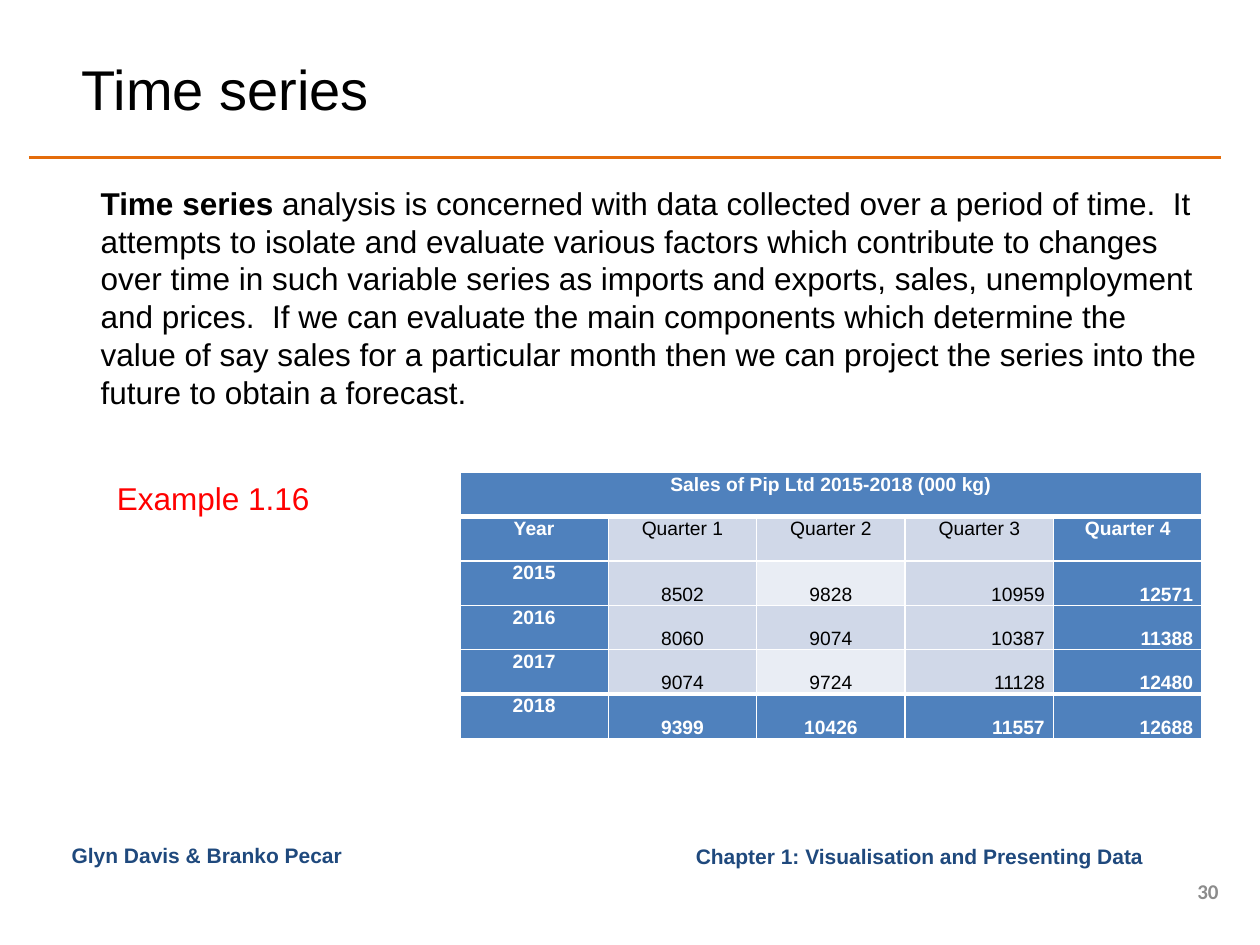
from pptx import Presentation
from pptx.dml.color import RGBColor
from pptx.enum.shapes import MSO_CONNECTOR
from pptx.enum.text import MSO_ANCHOR, PP_ALIGN
from pptx.oxml.ns import qn
from pptx.util import Inches, Pt
from lxml.etree import SubElement, Element

COLORS = {
    "text": "000000", "rule": "E46C0A", "footer": "1F497D", "number": "8C8C8C",
    "example": "FF0000", "white": "FFFFFF", "header": "4F81BD",
    "band": "D0D8E8", "light": "E9EDF4",
}
BODY = (
    " analysis is concerned with data collected over a period of time.  It attempts "
    "to isolate and evaluate various factors which contribute to changes over time in "
    "such variable series as imports and exports, sales, unemployment and prices.  If "
    "we can evaluate the main components which determine the value of say sales for a "
    "particular month then we can project the series into the future to obtain a forecast."
)
SALES_TITLE = "Sales of Pip Ltd 2015-2018 (000 kg)"
SALES = [
    ["Year", "Quarter 1", "Quarter 2", "Quarter 3", "Quarter 4"],
    [2015, 8502, 9828, 10959, 12571],
    [2016, 8060, 9074, 10387, 11388],
    [2017, 9074, 9724, 11128, 12480],
    [2018, 9399, 10426, 11557, 12688],
]


def rgb(name):
    return RGBColor.from_string(COLORS[name])


def add_run(p, text, color, size, bold=False, name="Arial"):
    r = p.add_run()
    r.text = text
    for key, value in {"name": name, "size": Pt(size), "bold": bold}.items():
        setattr(r.font, key, value)
    r.font.color.rgb = rgb(color)


def add_text(s, box, runs, align=PP_ALIGN.LEFT, anchor=MSO_ANCHOR.TOP):
    tf = s.shapes.add_textbox(*map(Inches, box)).text_frame
    tf.word_wrap = True
    tf.vertical_anchor = anchor
    p = tf.paragraphs[0]
    p.alignment = align
    for run in runs:
        add_run(p, **run)


def add_header(s, box):
    """Title with an orange rule along the bottom of the box."""
    left, top, width, height = box
    add_text(s, (left + 0.32, top, 7.58, 0.78),
             [{"text": "Time series", "color": "text", "size": 32}],
             anchor=MSO_ANCHOR.MIDDLE)
    y = Inches(top + height)
    rule = s.shapes.add_connector(MSO_CONNECTOR.STRAIGHT, Inches(left), y,
                                  Inches(left + width), y)
    rule.line.color.rgb = rgb("rule")
    rule.line.width = Pt(2)
    SubElement(rule._element.spPr, qn("a:effectLst"))


def add_body(s, box):
    """Definition paragraph and the example label below it."""
    left, top, width, height = box
    add_text(s, box, [
        {"text": "Time series", "color": "text", "size": 18, "bold": True},
        {"text": BODY, "color": "text", "size": 18},
    ])
    add_text(s, (left + 0.13, top + 2.34, 2.02, 0.4),
             [{"text": "Example 1.16", "color": "example", "size": 18}])


def set_borders(cell, widths):
    tcPr = cell._tc.get_or_add_tcPr()
    for i, (side, width) in enumerate(widths.items()):
        ln = Element(qn(f"a:ln{side}"), w=str(Pt(width)))
        fill = SubElement(ln, qn("a:solidFill"))
        SubElement(fill, qn("a:srgbClr"), val=COLORS["white"])
        tcPr.insert(i, ln)


def cell_fill(row, col, last_row, last_col):
    if row in (0, last_row) or col in (0, last_col):
        return "header"
    return "light" if col == 2 and row % 2 == 0 else "band"


def add_sales_table(s, box):
    """Quarterly sales: title row, column heads, then one row a year."""
    rows = [[SALES_TITLE, "", "", "", ""]] + SALES
    last_row, last_col = len(rows) - 1, len(rows[0]) - 1
    tbl = s.shapes.add_table(len(rows), len(rows[0]), *map(Inches, box)).table
    for i, row in enumerate(rows):
        for j, value in enumerate(row):
            cell = tbl.cell(i, j)
            fill = cell_fill(i, j, last_row, last_col)
            is_number = i > 1 and j > 0
            settings = {
                "margin_left": Inches(0.07), "margin_right": Inches(0.07),
                "margin_top": 0, "margin_bottom": 0,
                "vertical_anchor": MSO_ANCHOR.BOTTOM if is_number else MSO_ANCHOR.TOP,
            }
            for key, setting in settings.items():
                setattr(cell, key, setting)
            cell.fill.solid()
            cell.fill.fore_color.rgb = rgb(fill)
            # Thick lines close the title row and open the last year
            set_borders(cell, {"L": 1, "R": 1,
                               "T": 3 if i in (1, last_row) else 1,
                               "B": 3 if i in (0, last_row - 1) else 1})
            p = cell.text_frame.paragraphs[0]
            p.alignment = PP_ALIGN.RIGHT if is_number and j > 2 else PP_ALIGN.CENTER
            p.line_spacing = 1.07
            if value:
                strong = fill == "header"
                add_run(p, str(value), "white" if strong else "text", 11, strong)
    tbl.cell(0, 0).merge(tbl.cell(0, last_col))


def add_footer(s, box):
    """Authors, chapter and slide number."""
    left, top, width, height = box
    style = {"color": "footer", "size": 12, "bold": True}
    add_text(s, (left, top, 2.97, 0.31),
             [{"text": "Glyn Davis & Branko Pecar", **style}])
    add_text(s, (left + 4.22, top, 4.53, 0.31),
             [{"text": "Chapter 1: Visualisation and Presenting Data ", **style}],
             PP_ALIGN.RIGHT, MSO_ANCHOR.MIDDLE)
    add_text(s, (left + width - 0.47, top + height - 0.24, 0.47, 0.24),
             [{**style, "text": "30", "color": "number", "name": "Calibri"}],
             PP_ALIGN.RIGHT, MSO_ANCHOR.MIDDLE)


def main():
    prs = Presentation()
    prs.slide_width, prs.slide_height = Inches(10), Inches(7.5)
    s = prs.slides.add_slide(prs.slide_layouts[6])
    add_header(s, (0.23, 0.31, 9.46, 0.94))
    add_body(s, (0.7, 1.41, 8.98, 1.92))
    add_sales_table(s, (3.65, 3.75, 5.89, 2.11))
    add_footer(s, (0.47, 6.64, 9.3, 0.55))
    prs.save("out.pptx")


if __name__ == "__main__":
    main()
